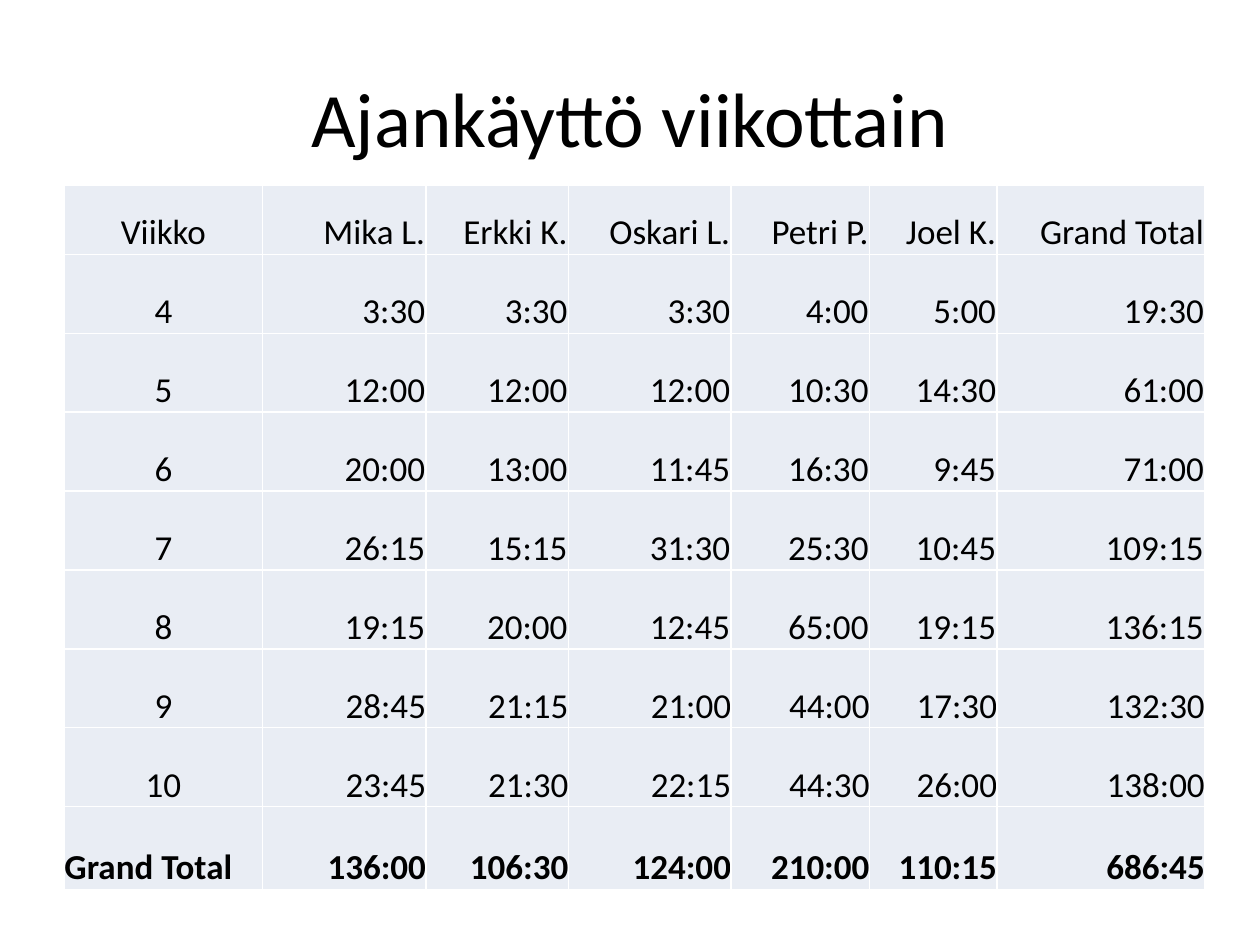
from dataclasses import dataclass

from lxml.etree import SubElement
from pptx import Presentation
from pptx.dml.color import RGBColor
from pptx.enum.text import MSO_ANCHOR, PP_ALIGN
from pptx.oxml.ns import qn
from pptx.util import Cm, Pt

TITLE = "Ajankäyttö viikottain"
ROWS = [
    ["Viikko", "Mika L.", "Erkki K.", "Oskari L.", "Petri P.", "Joel K.", "Grand Total"],
    ["4", "3:30", "3:30", "3:30", "4:00", "5:00", "19:30"],
    ["5", "12:00", "12:00", "12:00", "10:30", "14:30", "61:00"],
    ["6", "20:00", "13:00", "11:45", "16:30", "9:45", "71:00"],
    ["7", "26:15", "15:15", "31:30", "25:30", "10:45", "109:15"],
    ["8", "19:15", "20:00", "12:45", "65:00", "19:15", "136:15"],
    ["9", "28:45", "21:15", "21:00", "44:00", "17:30", "132:30"],
    ["10", "23:45", "21:30", "22:15", "44:30", "26:00", "138:00"],
    ["Grand Total", "136:00", "106:30", "124:00", "210:00", "110:15", "686:45"],
]
COLUMN_WIDTHS = [3.99, 3.3, 2.87, 3.28, 2.79, 2.57, 4.19]
HEADER_HEIGHT, WEEK_HEIGHT, TOTAL_HEIGHT = 1.4, 1.59, 1.67
TABLE_LEFT, TABLE_TOP = 1.3, 3.73
FIRST_TIGHT_ROW = 6


@dataclass(frozen=True)
class Theme:
    font: str = "Calibri"
    title_size: int = 44
    cell_size: int = 20
    text: str = "000000"
    fill: str = "E9EDF4"
    border: str = "FFFFFF"
    border_width: int = 1


THEME = Theme()


def write_text(frame, text, size=THEME.cell_size, bold=False, align=PP_ALIGN.LEFT):
    para = frame.paragraphs[0]
    para.alignment = align
    span = para.add_run()
    span.text = text
    span.font.name = THEME.font
    span.font.size = Pt(size)
    span.font.bold = bold
    span.font.color.rgb = RGBColor.from_string(THEME.text)


def add_borders(cell):
    properties = cell._tc.get_or_add_tcPr()
    for position, side in enumerate(("lnL", "lnR", "lnT", "lnB")):
        line = SubElement(properties, qn(f"a:{side}"), w=str(Pt(THEME.border_width)))
        fill = SubElement(line, qn("a:solidFill"))
        SubElement(fill, qn("a:srgbClr"), val=THEME.border)
        properties.insert(position, line)


def style_cell(cell, inset):
    cell.fill.solid()
    cell.fill.fore_color.rgb = RGBColor.from_string(THEME.fill)
    cell.vertical_anchor = MSO_ANCHOR.BOTTOM
    cell.margin_left = cell.margin_right = cell.margin_top = Cm(inset)
    cell.margin_bottom = Cm(0)
    add_borders(cell)


def add_title(page):
    box = page.shapes.add_textbox(Cm(1.27), Cm(0.76), Cm(22.86), Cm(3.18))
    box.text_frame.word_wrap = True
    box.text_frame.vertical_anchor = MSO_ANCHOR.MIDDLE
    write_text(box.text_frame, TITLE, size=THEME.title_size, align=PP_ALIGN.CENTER)


def add_hours_table(page):
    last = len(ROWS) - 1
    heights = [HEADER_HEIGHT] + [WEEK_HEIGHT] * (last - 1) + [TOTAL_HEIGHT]
    table = page.shapes.add_table(
        len(ROWS), len(COLUMN_WIDTHS), Cm(TABLE_LEFT), Cm(TABLE_TOP),
        Cm(sum(COLUMN_WIDTHS)), Cm(sum(heights)),
    ).table
    table.first_row = table.horz_banding = False
    for column, width in zip(table.columns, COLUMN_WIDTHS):
        column.width = Cm(width)
    for row, height in zip(table.rows, heights):
        row.height = Cm(height)
    for r, values in enumerate(ROWS):
        first_align = PP_ALIGN.LEFT if r == last else PP_ALIGN.CENTER
        for c, value in enumerate(values):
            cell = table.cell(r, c)
            style_cell(cell, inset=0 if r >= FIRST_TIGHT_ROW else 0.02)
            write_text(cell.text_frame, value, bold=r == last,
                       align=PP_ALIGN.RIGHT if c else first_align)


def main():
    deck = Presentation()
    deck.slide_width, deck.slide_height = Cm(25.4), Cm(19.05)
    page = deck.slides.add_slide(deck.slide_layouts[6])
    add_title(page)
    add_hours_table(page)
    deck.save("out.pptx")


if __name__ == "__main__":
    main()
